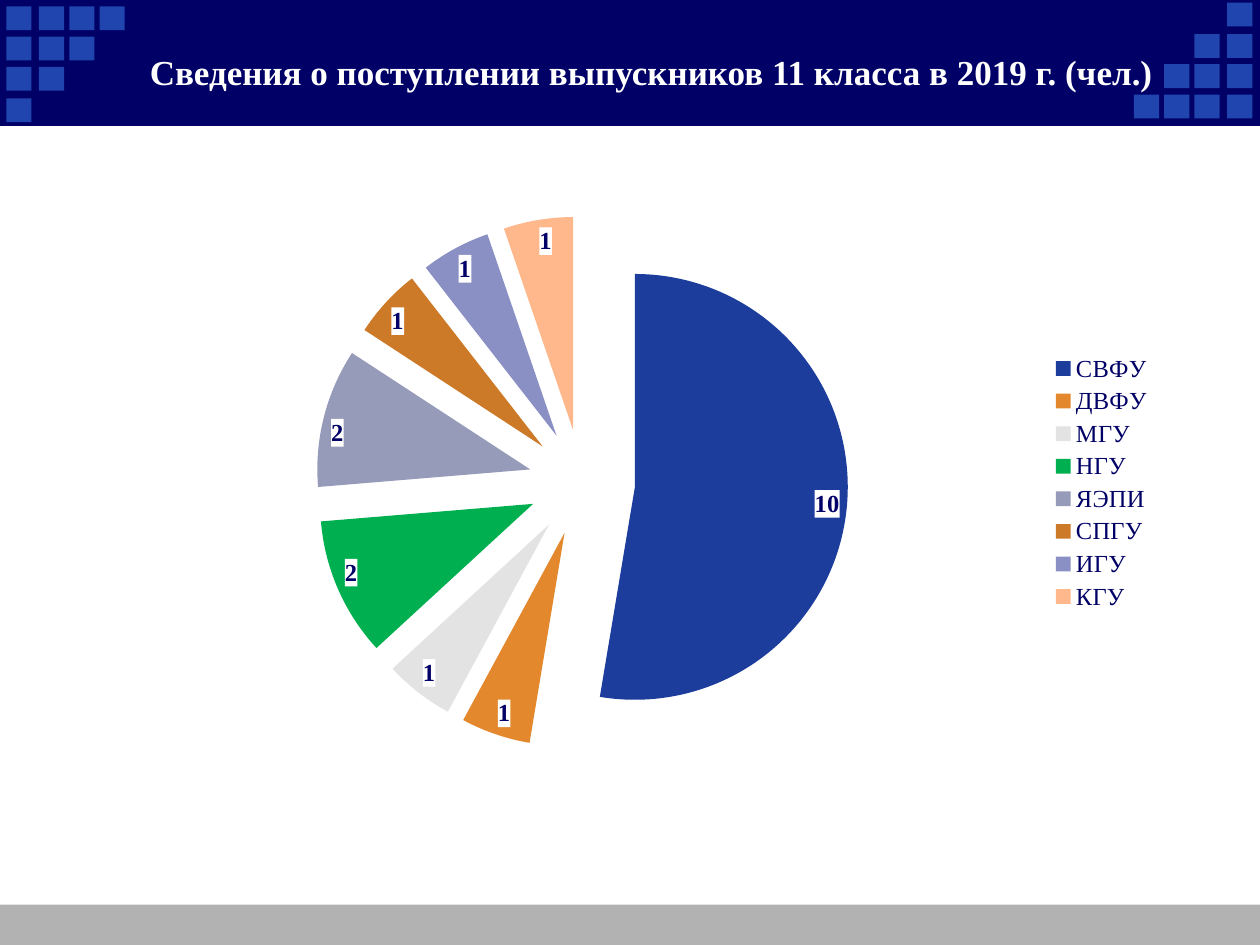
from dataclasses import dataclass

from lxml import etree
from pptx import Presentation
from pptx import util as u
from pptx.chart.data import CategoryChartData
from pptx.dml.color import RGBColor
from pptx.enum import chart as charts, shapes, text
from pptx.oxml.ns import qn


@dataclass(frozen=True)
class Theme:
    font: str = "Times New Roman"
    title_size: int = 20
    chart_size: int = 14
    navy: str = "000066"
    blue: str = "2045AE"
    gray: str = "B2B2B2"
    white: str = "FFFFFF"


THEME = Theme()
WIDTH, HEIGHT = 10, 7.5
SQUARE = (0.2, 0.19)
COLUMNS = (0.05, 0.31, 0.55, 0.79)
ROWS = (0.05, 0.29, 0.53, 0.78)
# Sum of the left/top edges of a square and its counterpart in the other corner
MIRROR_X, MIRROR_Y = 9.79, 0.8

ADMISSIONS = [
    ("СВФУ", 10, "1C3D9B"),
    ("ДВФУ", 1, "E3882D"),
    ("МГУ", 1, "E3E3E3"),
    ("НГУ", 2, "00B050"),
    ("ЯЭПИ", 2, "979BBA"),
    ("СПГУ", 1, "CC7A28"),
    ("ИГУ", 1, "8A90C4"),
    ("КГУ", 1, "FFB88C"),
]


def color(value):
    return RGBColor.from_string(value)


def inches(*lengths):
    return [u.Inches(length) for length in lengths]


def style_font(font, size, fill, bold=False):
    font.name = THEME.font
    font.size = u.Pt(size)
    font.bold = bold
    font.color.rgb = color(fill)


def add_rectangle(slide, box, fill):
    shape = slide.shapes.add_shape(shapes.MSO_SHAPE.RECTANGLE, *inches(*box))
    shape.shadow.inherit = False
    shape.fill.solid()
    shape.fill.fore_color.rgb = color(fill)
    shape.line.fill.background()


def add_text(slide, box, content, *, size, fill, bold=False,
             align=text.PP_ALIGN.CENTER, anchor=text.MSO_ANCHOR.MIDDLE):
    frame = slide.shapes.add_textbox(*inches(*box)).text_frame
    frame.word_wrap = True
    frame.vertical_anchor = anchor
    paragraph = frame.paragraphs[0]
    paragraph.alignment = align
    run = paragraph.add_run()
    run.text = content
    style_font(run.font, size, fill, bold)


def add_corner_squares(slide):
    """Draw a stepped triangle at top left and its half-turn at right."""
    for row, top in enumerate(ROWS):
        for left in COLUMNS[:len(COLUMNS) - row]:
            add_rectangle(slide, (left, top, *SQUARE), THEME.blue)
            add_rectangle(slide, (MIRROR_X - left, MIRROR_Y - top, *SQUARE), THEME.blue)


def fill_label_boxes(labels, fill):
    properties = etree.Element(qn("c:spPr"))
    solid = etree.SubElement(properties, qn("a:solidFill"))
    etree.SubElement(solid, qn("a:srgbClr"), val=fill)
    labels._element.find(qn("c:txPr")).addprevious(properties)


def explode_slices(series, percent):
    explosion = etree.Element(qn("c:explosion"), val=str(percent))
    series._element.find(qn("c:dPt")).addprevious(explosion)


def add_pie(slide, box, rows):
    data = CategoryChartData()
    data.categories = [name for name, _, _ in rows]
    data.add_series("Выпускники", [count for _, count, _ in rows])
    chart = slide.shapes.add_chart(
        charts.XL_CHART_TYPE.PIE, *inches(*box), data).chart
    style_font(chart.font, THEME.chart_size, THEME.navy)
    chart.has_title = False
    chart.has_legend = True
    chart.legend.position = charts.XL_LEGEND_POSITION.RIGHT
    chart.legend.include_in_layout = False

    plot = chart.plots[0]
    plot.vary_by_categories = True
    series = plot.series[0]
    for index, (_, _, fill) in enumerate(rows):
        slice_format = series.points[index].format
        slice_format.fill.solid()
        slice_format.fill.fore_color.rgb = color(fill)
        slice_format.line.fill.background()
    explode_slices(series, 25)

    labels = series.data_labels
    labels.show_value = True
    labels.show_percentage = False
    labels.position = charts.XL_LABEL_POSITION.INSIDE_END
    style_font(labels.font, THEME.chart_size, THEME.navy, bold=True)
    fill_label_boxes(labels, THEME.white)


def main():
    presentation = Presentation()
    presentation.slide_width, presentation.slide_height = inches(WIDTH, HEIGHT)
    slide = presentation.slides.add_slide(presentation.slide_layouts[6])

    add_rectangle(slide, (0, 7.18, WIDTH, HEIGHT - 7.18), THEME.gray)
    add_rectangle(slide, (0, 0, WIDTH, 1), THEME.navy)
    add_corner_squares(slide)
    add_pie(slide, (0.92, 1.58, 8.33, 4.5), ADMISSIONS)
    add_text(slide, (0.92, 0.32, 8.5, 0.5),
             "Сведения о поступлении выпускников 11 класса в 2019 г. (чел.)",
             size=THEME.title_size, fill=THEME.white, bold=True)

    presentation.save("out.pptx")


if __name__ == "__main__":
    main()
